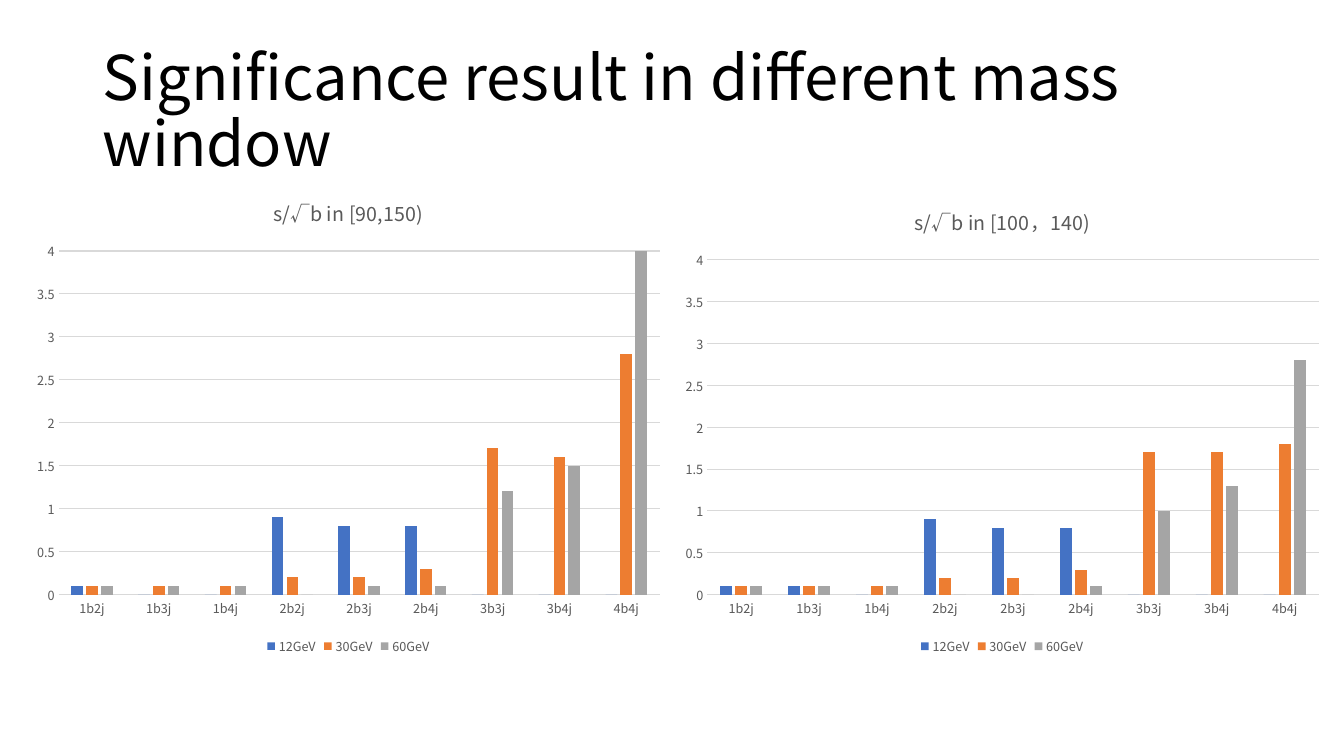
from pptx import Presentation
from pptx.chart.data import CategoryChartData
from pptx.dml.color import RGBColor
from pptx.enum.chart import XL_CHART_TYPE, XL_LEGEND_POSITION, XL_TICK_MARK
from pptx.enum.text import MSO_ANCHOR, MSO_AUTO_SIZE, PP_ALIGN
from pptx.util import Inches, Pt

JET_CATEGORIES = ["1b2j", "1b3j", "1b4j", "2b2j", "2b3j", "2b4j", "3b3j", "3b4j", "4b4j"]
MASS_COLORS = {"12GeV": "4472C4", "30GeV": "ED7D31", "60GeV": "A5A5A5"}

WIDE_WINDOW = [
    [0.1, 0, 0, 0.9, 0.8, 0.8, 0, 0, 0],
    [0.1, 0.1, 0.1, 0.2, 0.2, 0.3, 1.7, 1.6, 2.8],
    [0.1, 0.1, 0.1, 0, 0.1, 0.1, 1.2, 1.5, 4],
]
NARROW_WINDOW = [
    [0.1, 0.1, 0, 0.9, 0.8, 0.8, 0, 0, 0],
    [0.1, 0.1, 0.1, 0.2, 0.2, 0.3, 1.7, 1.7, 1.8],
    [0.1, 0.1, 0.1, 0, 0, 0.1, 1, 1.3, 2.8],
]


def color(hex_string):
    return RGBColor.from_string(hex_string)


class SlideBuilder:
    """Holds the shared style and the slide being built."""

    font_name = "Noto Sans CJK SC"
    title_color = "000000"
    label_color = "595959"
    grid_color = "D9D9D9"

    def __init__(self, slide):
        self.slide = slide

    def style_font(self, font, size, hex_string):
        font.name = self.font_name
        font.size = Pt(size)
        font.bold = False
        font.color.rgb = color(hex_string)

    def style_line(self, line):
        line.color.rgb = color(self.grid_color)
        line.width = Pt(0.75)

    def add_title(self, text, left, top, width, height):
        title = self.slide.shapes.title
        title.left, title.top = Inches(left), Inches(top)
        title.width, title.height = Inches(width), Inches(height)
        text_frame = title.text_frame
        text_frame.text = text
        text_frame.word_wrap = True
        text_frame.auto_size = MSO_AUTO_SIZE.NONE
        text_frame.vertical_anchor = MSO_ANCHOR.MIDDLE
        paragraph = text_frame.paragraphs[0]
        paragraph.alignment = PP_ALIGN.LEFT
        paragraph.line_spacing = 0.9
        self.style_font(paragraph.runs[0].font, 44, self.title_color)

    def add_column_chart(self, title, rows, left, top, width, height):
        chart_data = CategoryChartData()
        chart_data.categories = JET_CATEGORIES
        for mass, values in zip(MASS_COLORS, rows):
            chart_data.add_series(mass, values)
        chart = self.slide.shapes.add_chart(
            XL_CHART_TYPE.COLUMN_CLUSTERED,
            Inches(left), Inches(top), Inches(width), Inches(height), chart_data,
        ).chart
        self.style_font(chart.font, 10, self.title_color)

        chart.has_title = True
        title_frame = chart.chart_title.text_frame
        title_frame.text = title
        self.style_font(title_frame.paragraphs[0].runs[0].font, 14, self.label_color)
        chart.chart_title.include_in_layout = False

        chart.has_legend = True
        chart.legend.position = XL_LEGEND_POSITION.BOTTOM
        chart.legend.include_in_layout = False
        self.style_font(chart.legend.font, 9, self.label_color)

        plot = chart.plots[0]
        plot.gap_width = 219
        plot.overlap = -27
        plot.vary_by_categories = False
        for series, hex_string in zip(plot.series, MASS_COLORS.values()):
            series.format.fill.solid()
            series.format.fill.fore_color.rgb = color(hex_string)
            series.invert_if_negative = False
        self.style_axes(chart.category_axis, chart.value_axis)

    def style_axes(self, category_axis, value_axis):
        for axis in (category_axis, value_axis):
            axis.major_tick_mark = XL_TICK_MARK.NONE
            axis.minor_tick_mark = XL_TICK_MARK.NONE
            self.style_font(axis.tick_labels.font, 9, self.label_color)
        self.style_line(category_axis.format.line)
        value_axis.format.line.fill.background()
        value_axis.minimum_scale = 0
        value_axis.maximum_scale = 4
        value_axis.major_unit = 0.5
        value_axis.has_major_gridlines = True
        self.style_line(value_axis.major_gridlines.format.line)


def main():
    presentation = Presentation()
    presentation.slide_width = Inches(13.33)
    presentation.slide_height = Inches(7.5)
    builder = SlideBuilder(presentation.slides.add_slide(presentation.slide_layouts[5]))
    builder.add_title("Significance result in different mass window", 0.92, 0.4, 11.5, 1.45)
    builder.add_column_chart("s/√b in [90,150)", WIDE_WINDOW, 0.24, 1.76, 6.43, 4.78)
    builder.add_column_chart("s/√b in [100，140)", NARROW_WINDOW, 6.67, 1.85, 6.54, 4.69)
    presentation.save("out.pptx")


if __name__ == "__main__":
    main()
